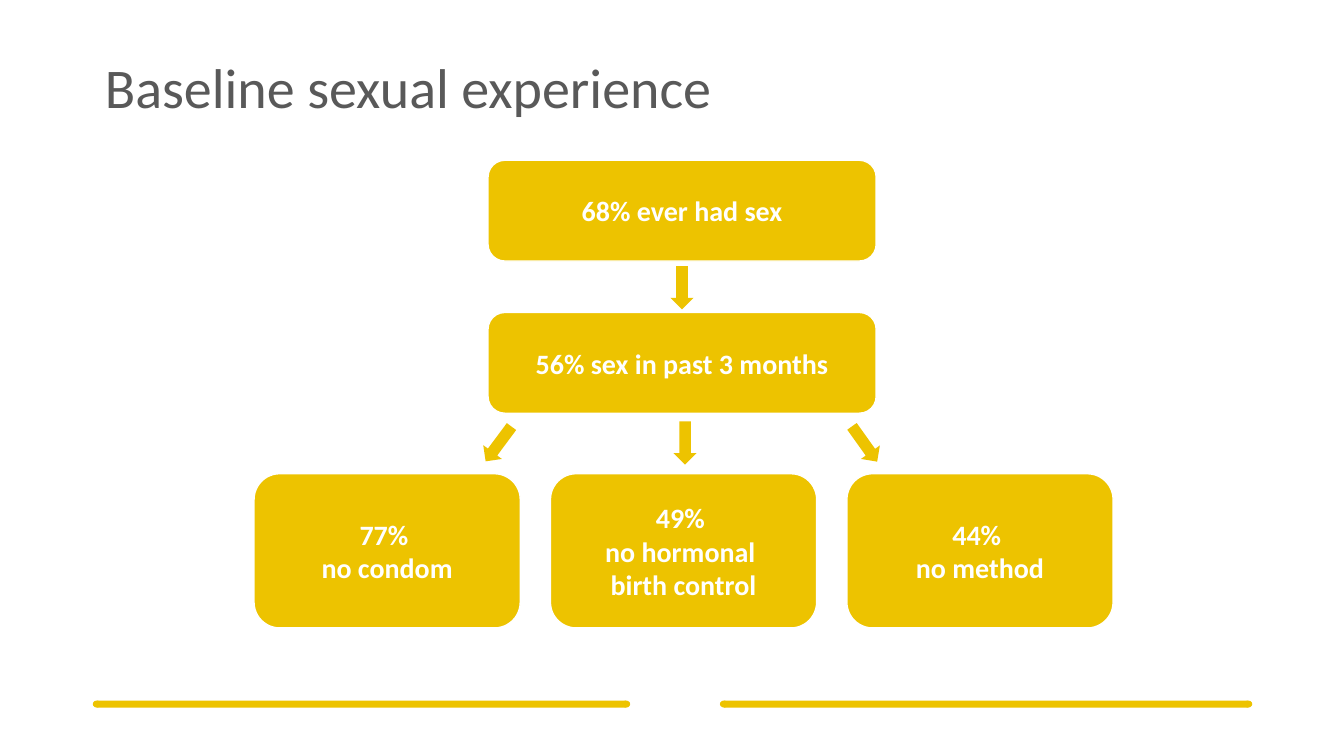
from dataclasses import dataclass

from pptx import Presentation
from pptx.dml.color import RGBColor
from pptx.enum.shapes import MSO_SHAPE
from pptx.enum.text import MSO_ANCHOR, PP_ALIGN
from pptx.util import Inches, Pt


@dataclass(frozen=True)
class Theme:
    font: str = "Calibri"
    gold: str = "EDC300"
    white: str = "FFFFFF"
    gray: str = "595959"
    head: int = 40
    body: int = 20


def write(frame, text, font, size, color, bold=False,
          align=PP_ALIGN.LEFT, space=1.0):
    """Fill a text frame, one paragraph for each line."""
    frame.word_wrap = True
    frame.vertical_anchor = MSO_ANCHOR.MIDDLE
    for i, line in enumerate(text.split("\n")):
        para = frame.add_paragraph() if i else frame.paragraphs[0]
        para.alignment = align
        para.line_spacing = space
        run = para.add_run()
        run.text = line
        run.font.name = font
        run.font.size = Pt(size)
        run.font.bold = bold
        run.font.color.rgb = RGBColor.from_string(color)


class Deck:
    def __init__(self, theme):
        self.theme = theme
        self.prs = Presentation()
        self.prs.slide_width = Inches(13.33)
        self.prs.slide_height = Inches(7.5)
        self.slide = self.prs.slides.add_slide(self.prs.slide_layouts[5])

    def title(self, text, x, y, w, h):
        t = self.theme
        hold = self.slide.shapes.title
        hold.left, hold.top = Inches(x), Inches(y)
        hold.width, hold.height = Inches(w), Inches(h)
        write(hold.text_frame, text, t.font, t.head, t.gray, space=0.9)

    def shape(self, kind, x, y, w, h, fill=None, line=None, turn=0):
        item = self.slide.shapes.add_shape(
            kind, Inches(x), Inches(y), Inches(w), Inches(h))
        item.shadow.inherit = False
        item.rotation = turn
        item.fill.solid()
        item.fill.fore_color.rgb = RGBColor.from_string(fill or self.theme.gold)
        if line:
            item.line.color.rgb = RGBColor.from_string(line)
            item.line.width = Pt(1)
        else:
            item.line.fill.background()
        return item

    def box(self, text, x, y, w, h):
        t = self.theme
        item = self.shape(MSO_SHAPE.ROUNDED_RECTANGLE, x, y, w, h, line=t.white)
        write(item.text_frame, text, t.font, t.body, t.white,
              bold=True, align=PP_ALIGN.CENTER)

    def arrow(self, x, y, turn=0):
        self.shape(MSO_SHAPE.DOWN_ARROW, x, y, 0.23, 0.43, turn=turn)

    def footer(self):
        # One bar, parted by a white block, with round ends
        white = self.theme.white
        self.shape(MSO_SHAPE.RECTANGLE, 0.96, 6.95, 11.42, 0.07)
        self.shape(MSO_SHAPE.RECTANGLE, 6.22, 6.52, 0.95, 0.98, white, white)
        for x in (0.92, 6.17, 7.14, 12.34):
            self.shape(MSO_SHAPE.OVAL, x, 6.95, 0.08, 0.07)


def main():
    deck = Deck(Theme())
    deck.footer()
    deck.title("Baseline sexual experience", 0.94, 0.4, 11.48, 1)

    # Upper steps
    deck.box("68% ever had sex", 4.84, 1.59, 3.85, 1)
    deck.box("56% sex in past 3 months", 4.84, 3.1, 3.85, 1)

    # Outcomes in a row
    notes = ("77% \nno condom",
             "49% \nno hormonal \nbirth control",
             "44% \nno method")
    for i, text in enumerate(notes):
        deck.box(text, 2.52 + i * 2.94, 4.7, 2.64, 1.53)

    # Arrows between the steps
    for x, y, turn in ((6.65, 2.64, 0), (6.68, 4.18, 0),
                       (8.46, 4.19, 324.5), (4.83, 4.19, 36.6)):
        deck.arrow(x, y, turn)

    deck.prs.save("out.pptx")


if __name__ == "__main__":
    main()
